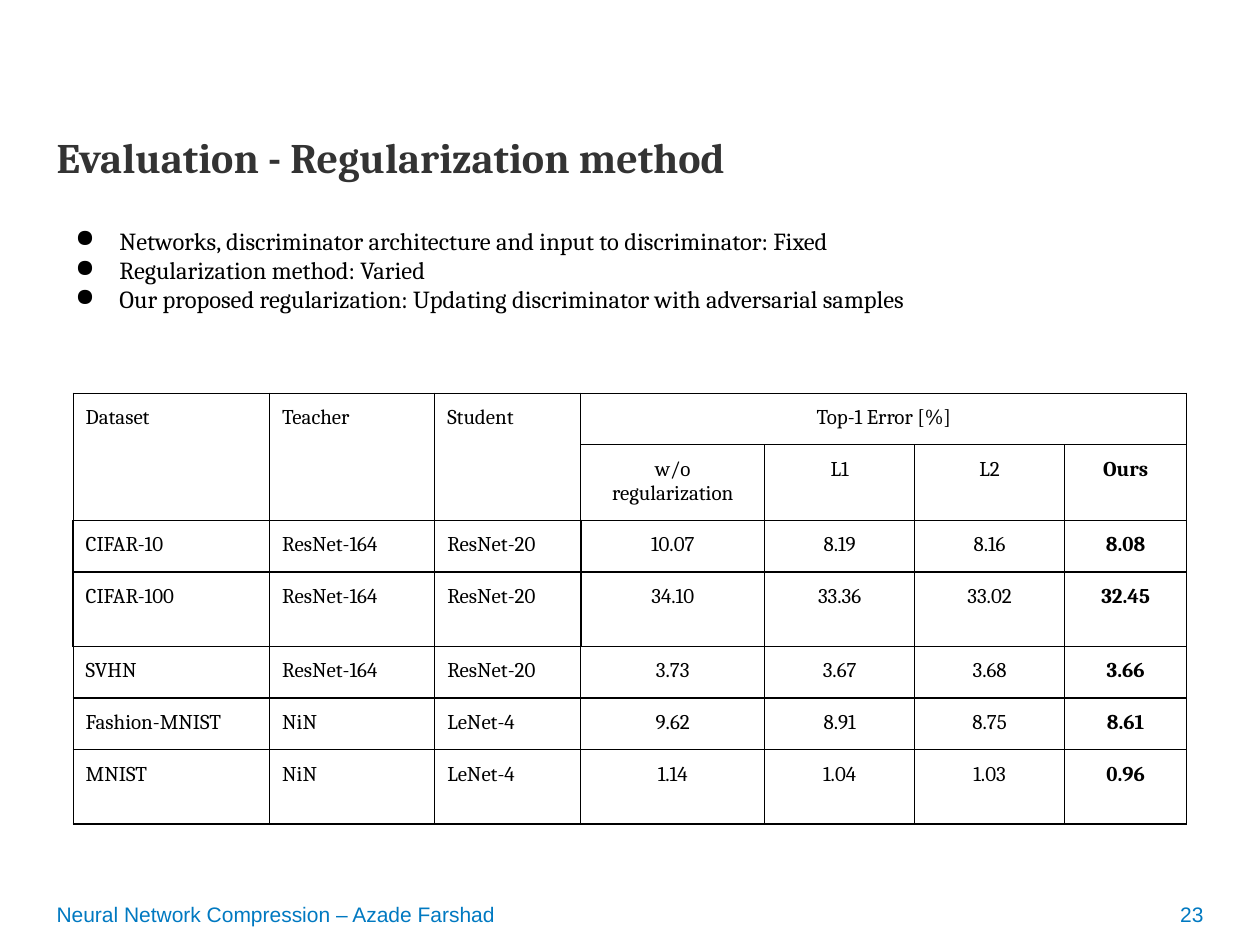
from lxml import etree
from pptx import Presentation
from pptx import util as u
from pptx.dml.color import RGBColor
from pptx.enum import text as t
from pptx.oxml.ns import qn

Inches = u.Inches
COLORS = {"title": "333333", "body": "000000", "footer": "0079C1", "border": "000000"}
LEFT, CENTER, RIGHT = t.PP_ALIGN.LEFT, t.PP_ALIGN.CENTER, t.PP_ALIGN.RIGHT


def write(frame, content, size=12, color="body", font="Cambria", bold=False,
          align=LEFT, anchor=t.MSO_ANCHOR.TOP, inset=0.1, bullet=None):
    """Fill a text frame, one paragraph per line of content."""
    frame.word_wrap = True
    frame.vertical_anchor = anchor
    frame.margin_left = frame.margin_right = Inches(0.1)
    frame.margin_top = frame.margin_bottom = Inches(inset)
    for i, line in enumerate(content.split("\n")):
        paragraph = frame.paragraphs[0] if i == 0 else frame.add_paragraph()
        paragraph.alignment = align
        if bullet:
            props = paragraph._p.get_or_add_pPr()
            props.set("marL", str(Inches(0.5)))
            props.set("indent", str(Inches(-0.35)))
            bullet_color = etree.SubElement(props, qn("a:buClr"))
            etree.SubElement(bullet_color, qn("a:srgbClr"), val=COLORS[color])
            etree.SubElement(props, qn("a:buChar"), char=bullet)
        run = paragraph.add_run()
        run.text = line
        run.font.size = u.Pt(size)
        run.font.name = font
        run.font.bold = bold
        run.font.color.rgb = RGBColor.from_string(COLORS[color])


def draw_borders(cell, widths):
    """Draw the cell's sides; widths maps L, R, T, B to points."""
    props = cell._tc.get_or_add_tcPr()
    for side, width in widths.items():
        line = etree.SubElement(props, qn(f"a:ln{side}"), w=str(u.Pt(width)))
        fill = etree.SubElement(line, qn("a:solidFill"))
        etree.SubElement(fill, qn("a:srgbClr"), val=COLORS["border"])


prs = Presentation()
prs.slide_width, prs.slide_height = Inches(10), Inches(7.5)
slide = prs.slides.add_slide(prs.slide_layouts[5])

# Title
title = slide.shapes.title
title.left, title.top = Inches(0.35), Inches(0.99)
title.width, title.height = Inches(9.29), Inches(0.95)
write(title.text_frame, "Evaluation - Regularization method",
      size=24, color="title", bold=True, inset=0.05)

# Footer and page number
for left, width, content, align in [
    (0.35, 6.85, "Neural Network Compression – Azade Farshad", LEFT),
    (9.02, 0.63, "23", RIGHT),
]:
    footer = slide.shapes.add_textbox(Inches(left), Inches(7.09), Inches(width), Inches(0.33))
    write(footer.text_frame, content, color="footer", font="Arial",
          align=align, anchor=t.MSO_ANCHOR.MIDDLE, inset=0.05)

# Error table
results = [
    ["Dataset", "Teacher", "Student", "Top-1 Error [%]", "", "", ""],
    ["", "", "", "w/o regularization", "L1", "L2", "Ours"],
    ["CIFAR-10", "ResNet-164", "ResNet-20", "10.07", "8.19", "8.16", "8.08"],
    ["CIFAR-100", "ResNet-164", "ResNet-20", "34.10", "33.36", "33.02", "32.45"],
    ["SVHN", "ResNet-164", "ResNet-20", "3.73", "3.67", "3.68", "3.66"],
    ["Fashion-MNIST", "NiN", "LeNet-4", "9.62", "8.91", "8.75", "8.61"],
    ["MNIST", "NiN", "LeNet-4", "1.14", "1.04", "1.03", "0.96"],
]
col_widths = [1.56, 1.31, 1.16, 1.46, 1.19, 1.19, 0.97]
row_heights = [0.41, 0.59, 0.41, 0.59, 0.41, 0.41, 0.59]
FIRST_ERROR_COL, OURS_COL = 3, 6
THICK_ROWS = (2, 3)

error_table = slide.shapes.add_table(
    len(results), len(col_widths), Inches(0.58), Inches(3.12),
    Inches(sum(col_widths)), Inches(sum(row_heights))).table
error_table.first_row = error_table.horz_banding = False
for column, width in zip(error_table.columns, col_widths):
    column.width = Inches(width)
for row, height in zip(error_table.rows, row_heights):
    row.height = Inches(height)

for r, values in enumerate(results):
    side = 1 if r in THICK_ROWS else 0.75
    top = 1 if r - 1 in THICK_ROWS else side
    bottom = 1 if r + 1 in THICK_ROWS else side
    for c, value in enumerate(values):
        cell = error_table.cell(r, c)
        draw_borders(cell, {"L": side, "R": side, "T": top, "B": bottom})
        cell.fill.background()
        cell.margin_left = cell.margin_right = Inches(0.1)
        cell.margin_top = cell.margin_bottom = Inches(0.1)
        if value:
            write(cell.text_frame, value, bold=c == OURS_COL,
                  align=CENTER if c >= FIRST_ERROR_COL else LEFT)

# Merged headings
for c in range(FIRST_ERROR_COL):
    error_table.cell(0, c).merge(error_table.cell(1, c))
error_table.cell(0, FIRST_ERROR_COL).merge(error_table.cell(0, OURS_COL))

# Setup bullets
setup = slide.shapes.add_textbox(Inches(0.35), Inches(1.69), Inches(8.9), Inches(1.27))
write(setup.text_frame,
      "Networks, discriminator architecture and input to discriminator: Fixed\n"
      "Regularization method: Varied\n"
      "Our proposed regularization: Updating discriminator with adversarial samples",
      size=14, bullet="●")

prs.save("out.pptx")
